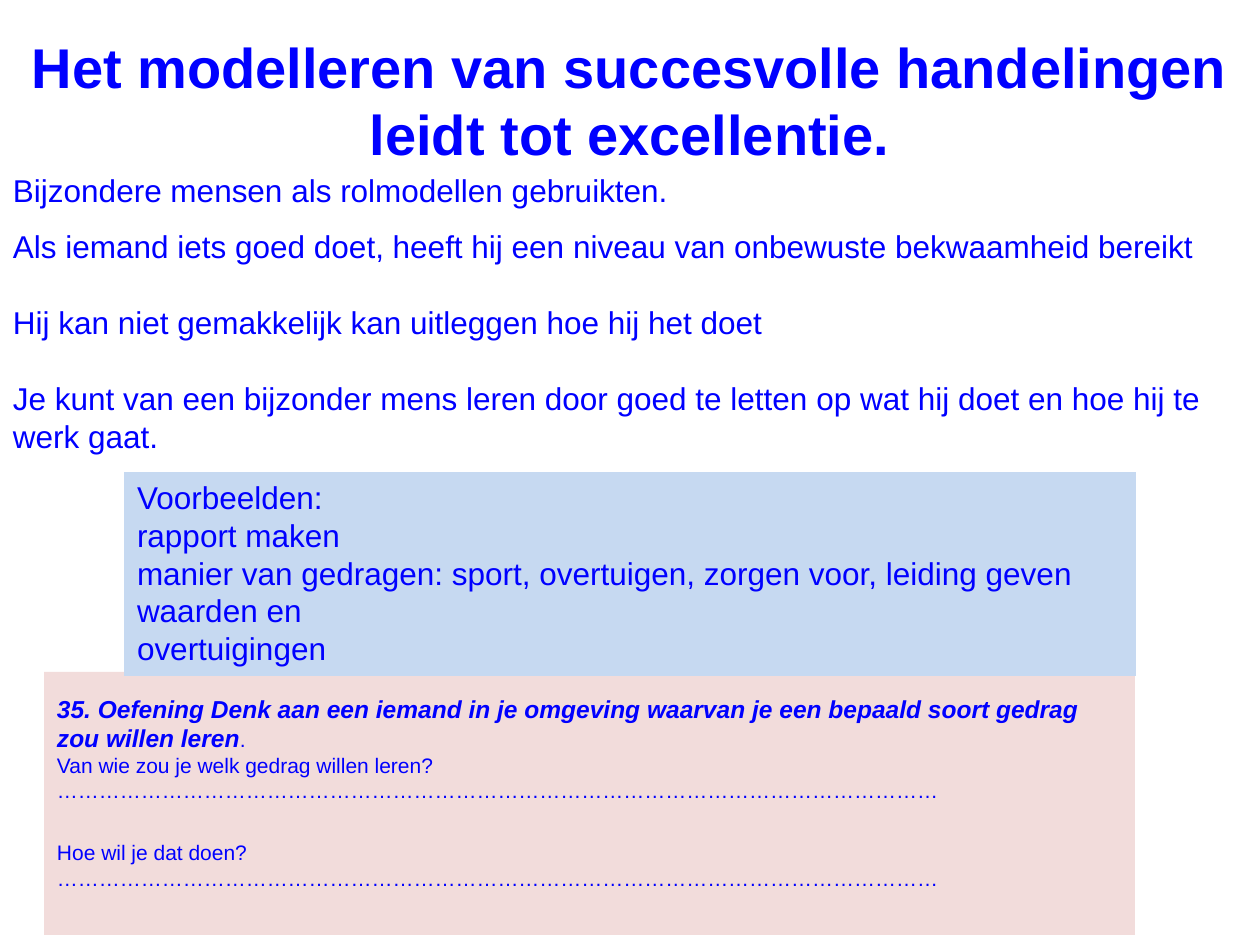
"""Build a slide on modelling successful behaviour, with examples and an exercise."""
from dataclasses import dataclass

from lxml import etree
from pptx import Presentation
from pptx.dml.color import RGBColor
from pptx.enum.shapes import MSO_SHAPE
from pptx.enum.text import MSO_ANCHOR, MSO_AUTO_SIZE, PP_ALIGN
from pptx.oxml.ns import qn
from pptx.util import Pt

RECTANGLE = MSO_SHAPE.RECTANGLE
TOP = MSO_ANCHOR.TOP
NO_AUTOFIT = MSO_AUTO_SIZE.NONE
LEFT, CENTER = PP_ALIGN.LEFT, PP_ALIGN.CENTER
EMU_PER_PX = 914400 // 126


@dataclass(frozen=True)
class Theme:
    font: str = "Arial"
    ink: RGBColor = RGBColor(0x00, 0x00, 0xFF)
    examples_fill: RGBColor = RGBColor(0xC6, 0xD9, 0xF1)
    exercise_fill: RGBColor = RGBColor(0xF2, 0xDC, 0xDB)
    title_size: int = 32
    text_size: int = 18
    task_size: int = 14
    question_size: int = 12
    question_gap: int = 21


THEME = Theme()

TITLE = "Het modelleren van succesvolle handelingen leidt tot excellentie."
STATEMENTS = [
    ("Bijzondere mensen als rolmodellen gebruikten.", (0, 165, 814, 51)),
    ("Als iemand iets goed doet, heeft hij een niveau van onbewuste bekwaamheid bereikt",
     (0, 221, 1260, 51)),
    ("Hij kan niet gemakkelijk kan uitleggen hoe hij het doet", (0, 297, 883, 51)),
    ("Je kunt van een bijzonder mens leren door goed te letten op wat hij doet "
     "en hoe hij te werk gaat.", (0, 373, 1225, 89)),
]
EXAMPLES = [
    "Voorbeelden:",
    "rapport maken",
    "manier van gedragen: sport, overtuigen, zorgen voor, leiding geven",
    "waarden en",
    "overtuigingen",
]
TASK = ("35. Oefening Denk aan een iemand in je omgeving waarvan je een bepaald "
        "soort gedrag zou willen leren")
QUESTIONS = ["Van wie zou je welk gedrag willen leren?", "Hoe wil je dat doen?"]
ANSWER_LINE = "…" * 42

TITLE_AREA = (0, 26, 1260, 149)
EXAMPLES_AREA = (124, 472, 1012, 204)
EXERCISE_AREA = (44, 672, 1091, 263)
MARGIN_X, MARGIN_Y, EXERCISE_MARGIN_TOP = 13, 6, 22


def px(value):
    return value * EMU_PER_PX


def place(box, area):
    box.left, box.top, box.width, box.height = map(px, area)


def prepare(box, margin_top=MARGIN_Y):
    frame = box.text_frame
    frame.word_wrap = True
    frame.auto_size = NO_AUTOFIT
    frame.vertical_anchor = TOP
    frame.margin_left = frame.margin_right = px(MARGIN_X)
    frame.margin_top, frame.margin_bottom = px(margin_top), px(MARGIN_Y)
    return frame


def style(font, size, bold=False, italic=False):
    font.name, font.size = THEME.font, Pt(size)
    font.bold, font.italic = bold, italic
    font.color.rgb = THEME.ink


def write(frame, lines, size, align=LEFT, bold=False):
    for index, line in enumerate(lines):
        para = frame.add_paragraph() if index else frame.paragraphs[0]
        para.text = line
        para.alignment = align
        para.space_before = Pt(0)
        style(para.font, size, bold)


def fill(box, color):
    box.fill.solid()
    box.fill.fore_color.rgb = color
    box.line.fill.background()


def remove_bullets(frame):
    for para in frame.paragraphs:
        properties = para._p.get_or_add_pPr()
        properties.set("marL", "0")
        properties.set("indent", "0")
        properties.insert_element_before(
            etree.SubElement(properties, qn("a:buNone")), "a:tabLst", "a:defRPr", "a:extLst")


def add_exercise(page):
    box = page.shapes.add_shape(RECTANGLE, *map(px, EXERCISE_AREA))
    box.shadow.inherit = False
    fill(box, THEME.exercise_fill)
    frame = prepare(box, EXERCISE_MARGIN_TOP)
    task = frame.paragraphs[0]
    task.alignment = LEFT
    for text, size, strong in ((TASK, THEME.task_size, True), (".", THEME.question_size, False)):
        span = task.add_run()
        span.text = text
        style(span.font, size, strong, strong)
    for index, question in enumerate(QUESTIONS):
        for line in (question, ANSWER_LINE):
            para = frame.add_paragraph()
            para.text = line
            para.alignment = LEFT
            style(para.font, THEME.question_size)
            if index and line == question:
                para.space_before = Pt(THEME.question_gap)


def main():
    deck = Presentation()
    deck.slide_width, deck.slide_height = px(1260), px(945)
    page = deck.slides.add_slide(deck.slide_layouts[1])
    title, examples = page.shapes.title, page.placeholders[1]

    add_exercise(page)

    place(title, TITLE_AREA)
    write(prepare(title), [TITLE], THEME.title_size, CENTER, bold=True)

    for text, area in STATEMENTS:
        box = page.shapes.add_textbox(*map(px, area))
        write(prepare(box), [text], THEME.text_size)

    place(examples, EXAMPLES_AREA)
    fill(examples, THEME.examples_fill)
    frame = prepare(examples)
    write(frame, EXAMPLES, THEME.text_size)
    remove_bullets(frame)
    examples.element.getparent().append(examples.element)

    deck.save("out.pptx")


if __name__ == "__main__":
    main()
